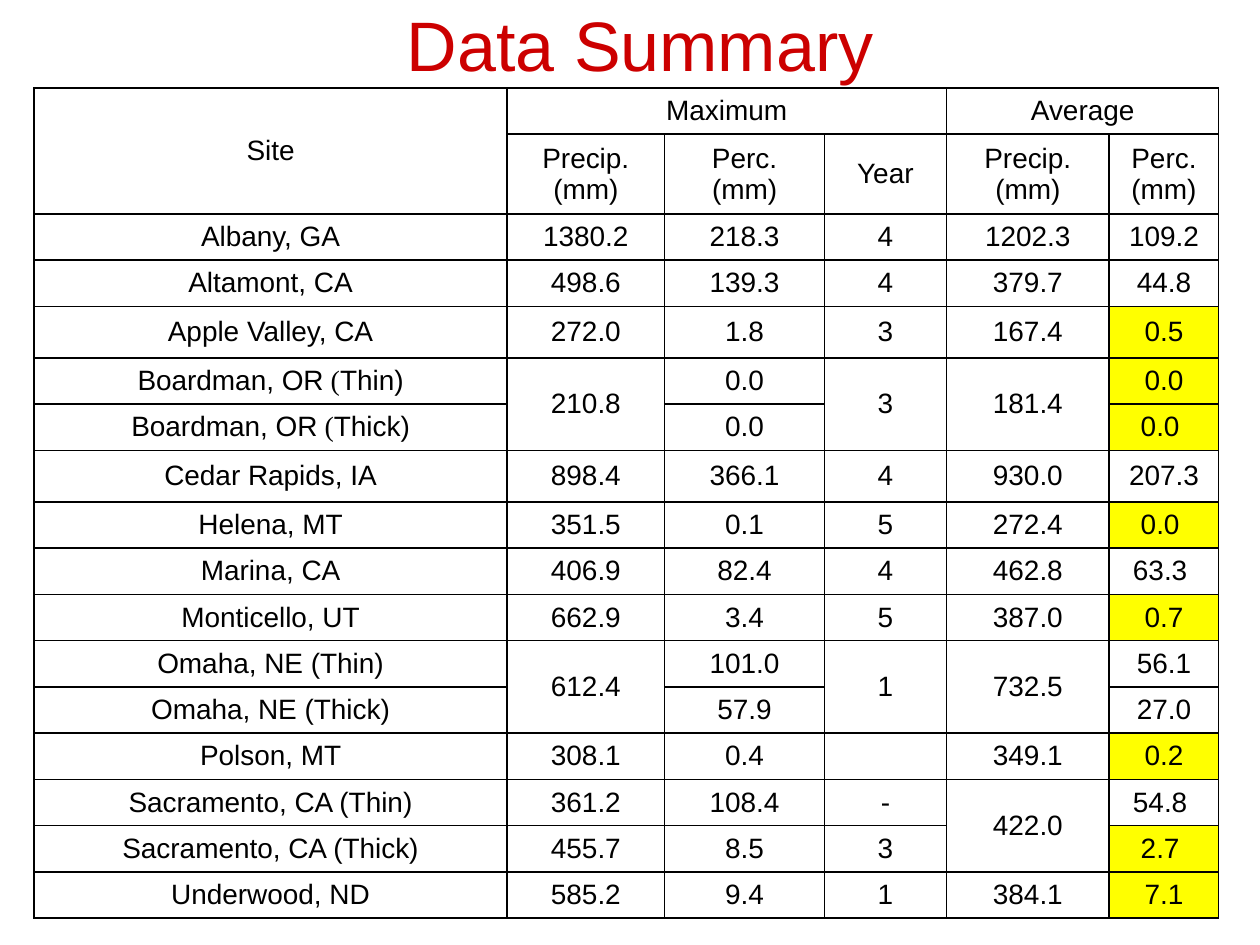
from lxml.etree import SubElement
from pptx import Presentation
from pptx.dml.color import RGBColor
from pptx.enum.text import MSO_ANCHOR as Anchor, PP_ALIGN as Align
from pptx.oxml.ns import qn
from pptx.util import Cm, Pt

BLACK = RGBColor(0x00, 0x00, 0x00)
RED = RGBColor(0xCC, 0x00, 0x00)
YELLOW = RGBColor(0xFF, 0xFF, 0x00)

LOW_PERCOLATION = 10  # average percolation below this is highlighted
HEADER_ROWS = 2

COLUMN_WIDTHS = [9.53, 3.18, 3.22, 2.46, 3.28, 2.21]
ROW_HEIGHT = 0.93
SPECIAL_HEIGHTS = {1: 1.6, 4: 1.04, 7: 1.04}

ROWS = [
    ["Site", "Maximum", "", "", "Average", ""],
    ["", "Precip.\n(mm)", "Perc.\n(mm)", "Year", "Precip.\n(mm)", "Perc. (mm)"],
    ["Albany, GA", "1380.2", "218.3", "4", "1202.3", "109.2"],
    ["Altamont, CA", "498.6", "139.3", "4", "379.7", "44.8"],
    ["Apple Valley, CA", "272.0", "1.8", "3", "167.4", "0.5"],
    ["Boardman, OR (Thin)", "210.8", "0.0", "3", "181.4", "0.0"],
    ["Boardman, OR (Thick)", "", "0.0", "", "", "0.0 "],
    ["Cedar Rapids, IA", "898.4", "366.1", "4", "930.0", "207.3"],
    ["Helena, MT", "351.5", "0.1", "5", "272.4", "0.0 "],
    ["Marina, CA", "406.9", "82.4", "4", "462.8", "63.3 "],
    ["Monticello, UT", "662.9", "3.4", "5", "387.0", "0.7"],
    ["Omaha, NE (Thin)", "612.4", "101.0", "1", "732.5", "56.1"],
    ["Omaha, NE (Thick)", "", "57.9", "", "", "27.0"],
    ["Polson, MT", "308.1", "0.4", "", "349.1", "0.2"],
    ["Sacramento, CA (Thin)", "361.2", "108.4", "-", "422.0", "54.8 "],
    ["Sacramento, CA (Thick)", "455.7", "8.5", "3", "", "2.7 "],
    ["Underwood, ND", "585.2", "9.4", "1", "384.1", "7.1"],
]

# First and last cell of each merged block, as (row, column)
MERGES = [((0, 0), (1, 0)), ((0, 1), (0, 3)), ((0, 4), (0, 5))]
MERGES += [((row, column), (row + 1, column)) for row in (5, 11) for column in (1, 3, 4)]
MERGES += [((14, 4), (15, 4))]


class SlideBuilder:
    font_name = "Arial"
    accent_font = "Times New Roman"
    title_size = Pt(40)
    cell_size = Pt(16)

    def __init__(self, slide):
        self.slide = slide

    def style(self, paragraph, size, color):
        paragraph.alignment = Align.CENTER
        paragraph.font.name = self.font_name
        paragraph.font.size = size
        paragraph.font.color.rgb = color

    def title(self, text, left, top, width, height):
        box = self.slide.shapes.add_textbox(Cm(left), Cm(top), Cm(width), Cm(height))
        frame = box.text_frame
        frame.word_wrap = True
        frame.vertical_anchor = Anchor.MIDDLE
        frame.text = text
        self.style(frame.paragraphs[0], self.title_size, RED)

    def borders(self, cell, right_width):
        properties = cell._tc.get_or_add_tcPr()
        for side, width in (("L", Pt(1)), ("R", right_width), ("T", Pt(1)), ("B", Pt(1))):
            line = SubElement(properties, qn(f"a:ln{side}"), w=str(width))
            fill = SubElement(line, qn("a:solidFill"))
            SubElement(fill, qn("a:srgbClr"), val=str(BLACK))

    def cell(self, cell, text, highlighted, right_width):
        self.borders(cell, right_width)
        cell.vertical_anchor = Anchor.MIDDLE
        if highlighted:
            cell.fill.solid()
            cell.fill.fore_color.rgb = YELLOW
        else:
            cell.fill.background()
        if not text:  # keeps an empty line from stretching its row
            cell.margin_top = cell.margin_bottom = 0
        if text.startswith("Boardman"):
            # The opening bracket is set in the accent font
            for part in text.partition(" ("):
                run = cell.text_frame.paragraphs[0].add_run()
                run.text = part
                run.font.name = self.accent_font if part == " (" else self.font_name
        else:
            cell.text = text
        for paragraph in cell.text_frame.paragraphs:
            self.style(paragraph, self.cell_size, BLACK)

    def table(self, rows, left, top):
        heights = [SPECIAL_HEIGHTS.get(index, ROW_HEIGHT) for index in range(len(rows))]
        table = self.slide.shapes.add_table(
            len(rows), len(COLUMN_WIDTHS), Cm(left), Cm(top),
            Cm(sum(COLUMN_WIDTHS)), Cm(sum(heights))).table
        table.first_row = table.horz_banding = False
        for column, width in zip(table.columns, COLUMN_WIDTHS):
            column.width = Cm(width)
        for row, height in zip(table.rows, heights):
            row.height = Cm(height)

        last = len(COLUMN_WIDTHS) - 1
        for row_index, texts in enumerate(rows):
            for column_index, text in enumerate(texts):
                is_last = column_index == last
                highlighted = (is_last and row_index >= HEADER_ROWS
                               and float(text) < LOW_PERCOLATION)
                outer = is_last or (row_index == 0 and column_index == last - 1)
                self.cell(table.cell(row_index, column_index), text, highlighted,
                          Pt(0.75) if outer else Pt(1))
        for first, final in MERGES:
            table.cell(*first).merge(table.cell(*final))


def main():
    presentation = Presentation()
    presentation.slide_width = Cm(25.4)
    presentation.slide_height = Cm(19.05)
    builder = SlideBuilder(presentation.slides.add_slide(presentation.slide_layouts[6]))

    # Heading
    builder.title("Data Summary", 2.11, 0, 21.59, 1.75)

    # Precipitation and percolation by site
    builder.table(ROWS, 0.69, 1.77)

    presentation.save("out.pptx")


if __name__ == "__main__":
    main()
